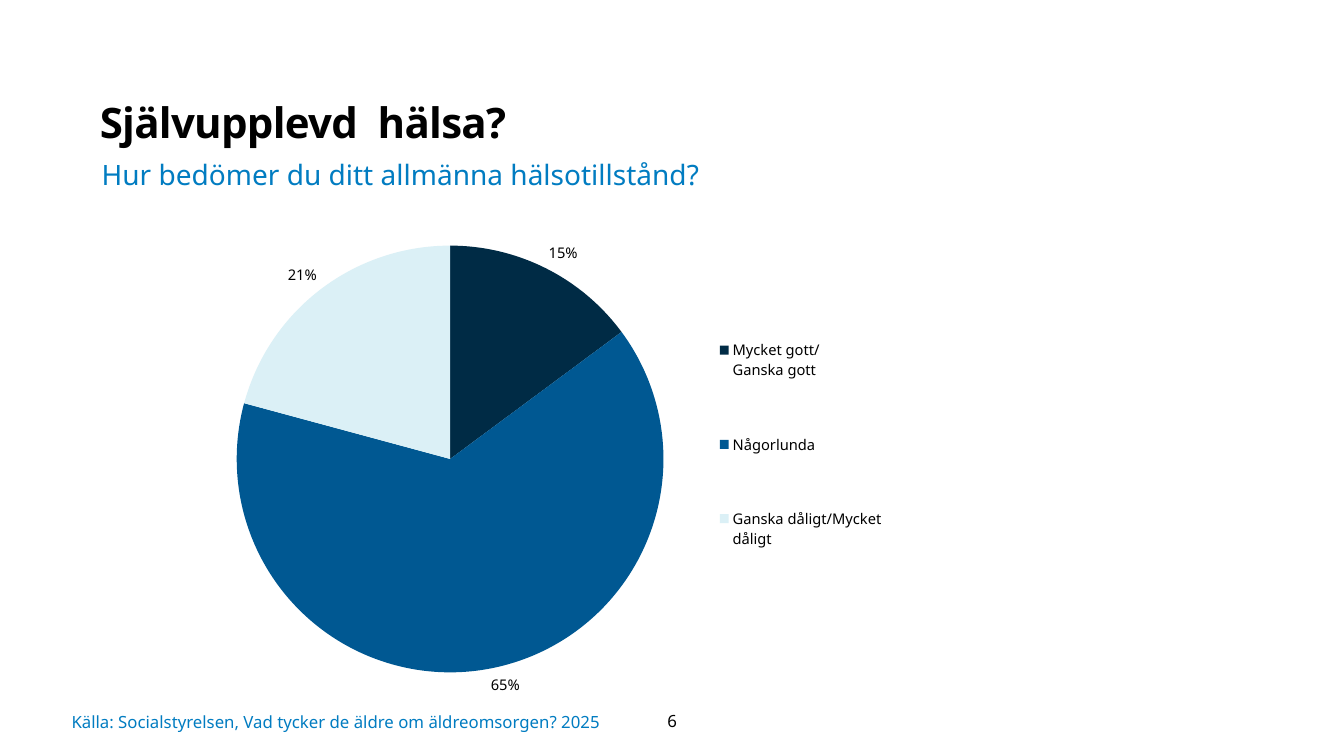
from lxml import etree
from pptx import Presentation
from pptx.chart.data import CategoryChartData
from pptx.dml.color import RGBColor
from pptx.enum.chart import XL_CHART_TYPE as ChartType
from pptx.enum.chart import XL_LABEL_POSITION as LabelPosition
from pptx.enum.chart import XL_LEGEND_POSITION as LegendPosition
from pptx.enum.text import MSO_ANCHOR as Anchor
from pptx.enum.text import PP_ALIGN as Align
from pptx.oxml.ns import qn
from pptx.util import Pt

FONT = "Noto Sans"
COLORS = {"black": "000000", "blue": "017CC1", "navy": "002B45",
          "ocean": "005892", "ice": "DBF0F6"}

TITLE = "Självupplevd  hälsa?"
QUESTION = "Hur bedömer du ditt allmänna hälsotillstånd?"
SOURCE = "Källa: Socialstyrelsen, Vad tycker de äldre om äldreomsorgen? 2025"
PAGE_NUMBER = "6"
ANSWERS = [
    ("Mycket gott/\nGanska gott", 15, "navy"),
    ("Någorlunda", 65, "ocean"),
    ("Ganska dåligt/Mycket dåligt", 21, "ice"),
]
# Left, top, width, height as shares of the chart area
PLOT_LAYOUT = (0.064, 0.067, 0.485, 0.876)
LEGEND_LAYOUT = (0.6, 0.15, 0.21, 0.65)


def rgb(name):
    return RGBColor.from_string(COLORS[name])


def set_font(font, size, color="black", bold=False):
    font.name = FONT
    font.size = Pt(size)
    font.bold = bold
    font.color.rgb = rgb(color)


def add_text(slide, text, box, size, color="black", bold=False, align=Align.LEFT,
             anchor=Anchor.TOP, insets=(7.2, 3.6, 7.2, 3.6), line_spacing=None,
             tracking=None):
    """Box and insets are in points; tracking is in hundredths of a point."""
    frame = slide.shapes.add_textbox(*map(Pt, box)).text_frame
    frame.word_wrap = True
    frame.vertical_anchor = anchor
    (frame.margin_left, frame.margin_top,
     frame.margin_right, frame.margin_bottom) = map(Pt, insets)
    paragraph = frame.paragraphs[0]
    paragraph.alignment = align
    paragraph.line_spacing = line_spacing
    run = paragraph.add_run()
    run.text = text
    set_font(run.font, size, color, bold)
    if tracking is not None:
        run.font._element.set("spc", str(tracking))


def set_layout(element, shares, inner=False):
    """Give a plot area or legend a fixed place inside the chart."""
    layout = element.find(qn("c:layout"))
    if layout is None:
        layout = etree.Element(qn("c:layout"))
        position = element.find(qn("c:legendPos"))
        if position is None:
            element.insert(0, layout)
        else:
            position.addnext(layout)
    manual = etree.SubElement(layout, qn("c:manualLayout"))
    settings = [("layoutTarget", "inner")] if inner else []
    settings += [("xMode", "edge"), ("yMode", "edge")]
    settings += zip("xywh", shares)
    for tag, value in settings:
        etree.SubElement(manual, qn(f"c:{tag}")).set("val", str(value))


def add_health_pie(slide, box):
    data = CategoryChartData()
    data.categories = [label for label, _, _ in ANSWERS]
    data.add_series("Series 1", [value for _, value, _ in ANSWERS])
    chart = slide.shapes.add_chart(ChartType.PIE, *map(Pt, box), data).chart
    set_font(chart.font, 10)
    chart.has_title = False

    chart.has_legend = True
    legend = chart.legend
    legend.position = LegendPosition.RIGHT
    legend.include_in_layout = False
    set_font(legend.font, 10.5)
    set_layout(legend._element, LEGEND_LAYOUT)

    plot = chart.plots[0]
    plot.vary_by_categories = True
    set_layout(plot._element.getparent(), PLOT_LAYOUT, inner=True)
    series = plot.series[0]
    for index, (_, _, color) in enumerate(ANSWERS):
        fill = series.points[index].format.fill
        fill.solid()
        fill.fore_color.rgb = rgb(color)

    # The rounded shares add up to 101, so the values serve as labels
    labels = series.data_labels
    labels.show_value = True
    labels.number_format = '0"%"'
    labels.number_format_is_linked = False
    labels.position = LabelPosition.OUTSIDE_END
    set_font(labels.font, 10.5)


def main():
    presentation = Presentation()
    presentation.slide_width, presentation.slide_height = Pt(960), Pt(540)
    slide = presentation.slides.add_slide(presentation.slide_layouts[6])

    add_text(slide, TITLE, (71.3, 65.5, 708, 44), 30, bold=True,
             insets=(0, 0, 7.2, 3.6), line_spacing=1.1, tracking=-50)
    add_text(slide, QUESTION, (65.5, 108.7, 567.4, 31.7), 20, "blue")
    add_health_pie(slide, (128.9, 151.9, 628.6, 348.5))
    add_text(slide, SOURCE, (51.1, 500.4, 392.4, 30.2), 12, "blue",
             anchor=Anchor.MIDDLE, insets=(0, 0, 0, 0))
    add_text(slide, PAGE_NUMBER, (443.5, 500.4, 73.4, 28.8), 12,
             align=Align.CENTER, anchor=Anchor.MIDDLE)
    presentation.save("out.pptx")


if __name__ == "__main__":
    main()
